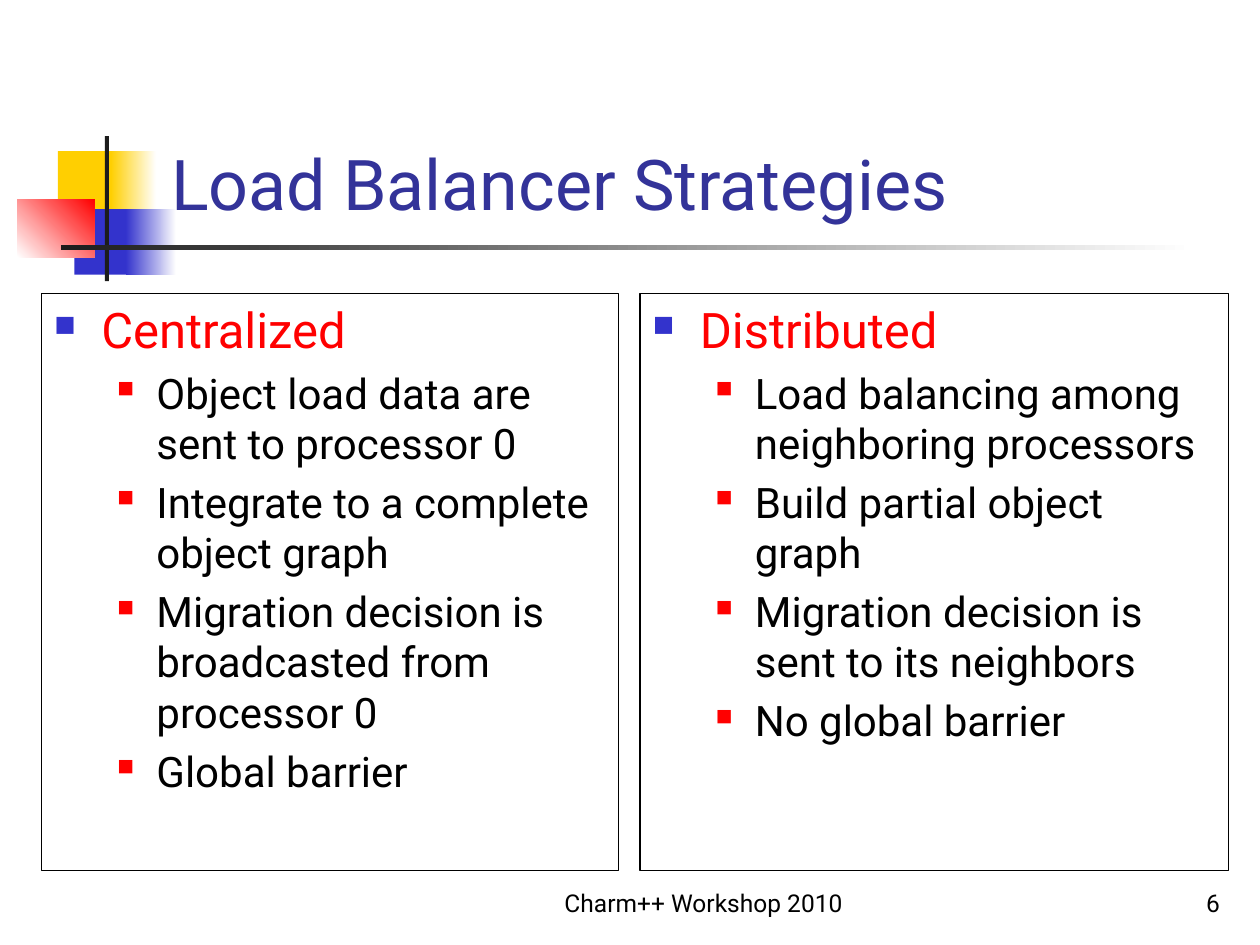
"""Build the load balancer strategies slide."""
from lxml import etree
from pptx import Presentation
from pptx.dml.color import RGBColor
from pptx.enum.shapes import MSO_SHAPE
from pptx.enum.text import MSO_ANCHOR, PP_ALIGN
from pptx.oxml.ns import qn
from pptx.util import Pt

RECT = MSO_SHAPE.RECTANGLE
TOP, BOTTOM = MSO_ANCHOR.TOP, MSO_ANCHOR.BOTTOM
LEFT, CENTER, RIGHT = PP_ALIGN.LEFT, PP_ALIGN.CENTER, PP_ALIGN.RIGHT
FONT = "Roboto"
BLACK, WHITE, RED = "000000", "FFFFFF", "FF0000"
GOLD, BLUE, NAVY, DARK = "FFCF01", "3333CC", "333399", "1C1C1C"

DECOR = [
    ((33.1, 86.4, 34.6, 37.4), [GOLD], 0),
    ((63.4, 86.4, 25.9, 37.4), [GOLD, WHITE], 0),
    ((42.5, 119.5, 33.1, 37.4), [BLUE], 0),
    ((72, 119.5, 28.8, 37.4), [BLUE, WHITE], 0),
    ((10, 113.8, 44, 33.1), [WHITE, RED], 45),
    ((60, 77.8, 2.2, 82.8), [DARK], 0),
    ((34.6, 140.2, 648, 2.4), [DARK, WHITE], 0),
]
PANELS = [
    ((23.8, 167.8, 329.8, 329.8), "Centralized", [
        "Object load data are sent to processor 0",
        "Integrate to a complete object graph",
        "Migration decision is broadcasted from processor 0",
        "Global barrier",
    ]),
    ((365.8, 167.8, 336.2, 329.8), "Distributed", [
        "Load balancing among neighboring processors",
        "Build partial object graph",
        "Migration decision is sent to its neighbors",
        "No global barrier",
    ]),
]


def rgb(code):
    """Return the colour for a hex string."""
    return RGBColor.from_string(code)


def add_block(slide, box, tones, angle):
    """Add a borderless rectangle, solid or fading between two tones."""
    block = slide.shapes.add_shape(RECT, *map(Pt, box))
    block.shadow.inherit = False
    block.line.fill.background()
    if len(tones) == 1:
        block.fill.solid()
        block.fill.fore_color.rgb = rgb(tones[0])
        return
    block.fill.gradient()
    block.fill.gradient_angle = angle
    for stop, tone in zip(block.fill.gradient_stops, tones):
        stop.color.rgb = rgb(tone)


def add_box(slide, box, anchor):
    """Add a wrapping text box."""
    shape = slide.shapes.add_textbox(*map(Pt, box))
    shape.text_frame.word_wrap = True
    shape.text_frame.vertical_anchor = anchor
    return shape


def add_run(para, text, size, color):
    """Add one run of styled text."""
    run = para.add_run()
    run.text = text
    run.font.name = FONT
    run.font.size = Pt(size)
    run.font.color.rgb = rgb(color)


def add_label(slide, box, text, size, color, align):
    """Add a single line that sits at the bottom of its box."""
    para = add_box(slide, box, BOTTOM).text_frame.paragraphs[0]
    para.alignment = align
    add_run(para, text, size, color)


def set_bullet(para, level, margin, hang, color, scale):
    """Give a paragraph its level, indent, spacing and square bullet."""
    para.level = level
    props = para._p.get_or_add_pPr()
    props.set("marL", str(Pt(margin)))
    props.set("indent", str(-Pt(hang)))
    space = etree.SubElement(props, qn("a:spcBef"))
    etree.SubElement(space, qn("a:spcPct"), val="20000")
    tint = etree.SubElement(props, qn("a:buClr"))
    etree.SubElement(tint, qn("a:srgbClr"), val=color)
    etree.SubElement(props, qn("a:buSzPct"), val=str(scale * 1000))
    etree.SubElement(props, qn("a:buChar"), char="■")


def add_panel(slide, box, head, items):
    """Add an outlined panel with a heading and its bullet points."""
    panel = add_box(slide, box, TOP)
    panel.line.color.rgb = rgb(BLACK)
    panel.line.width = Pt(0.75)
    frame = panel.text_frame
    para = frame.paragraphs[0]
    set_bullet(para, 0, 27, 27, BLUE, 60)
    add_run(para, head, 28, RED)
    for item in items:
        para = frame.add_paragraph()
        set_bullet(para, 1, 58.5, 22.5, RED, 55)
        add_run(para, item, 24, BLACK)


def main():
    """Build and save the slide."""
    deck = Presentation()
    deck.slide_width, deck.slide_height = Pt(720), Pt(540)
    slide = deck.slides.add_slide(deck.slide_layouts[6])
    for box, tones, angle in DECOR:
        add_block(slide, box, tones, angle)
    add_label(slide, (90.7, 25.9, 613.4, 105.8),
              "Load Balancer Strategies", 40, NAVY, LEFT)
    for box, head, items in PANELS:
        add_panel(slide, box, head, items)
    add_label(slide, (554.4, 491.8, 149.8, 36), "6", 14, BLACK, RIGHT)
    add_label(slide, (288, 491.8, 228.2, 36),
              "Charm++ Workshop 2010", 14, BLACK, CENTER)
    deck.save("out.pptx")


if __name__ == "__main__":
    main()
